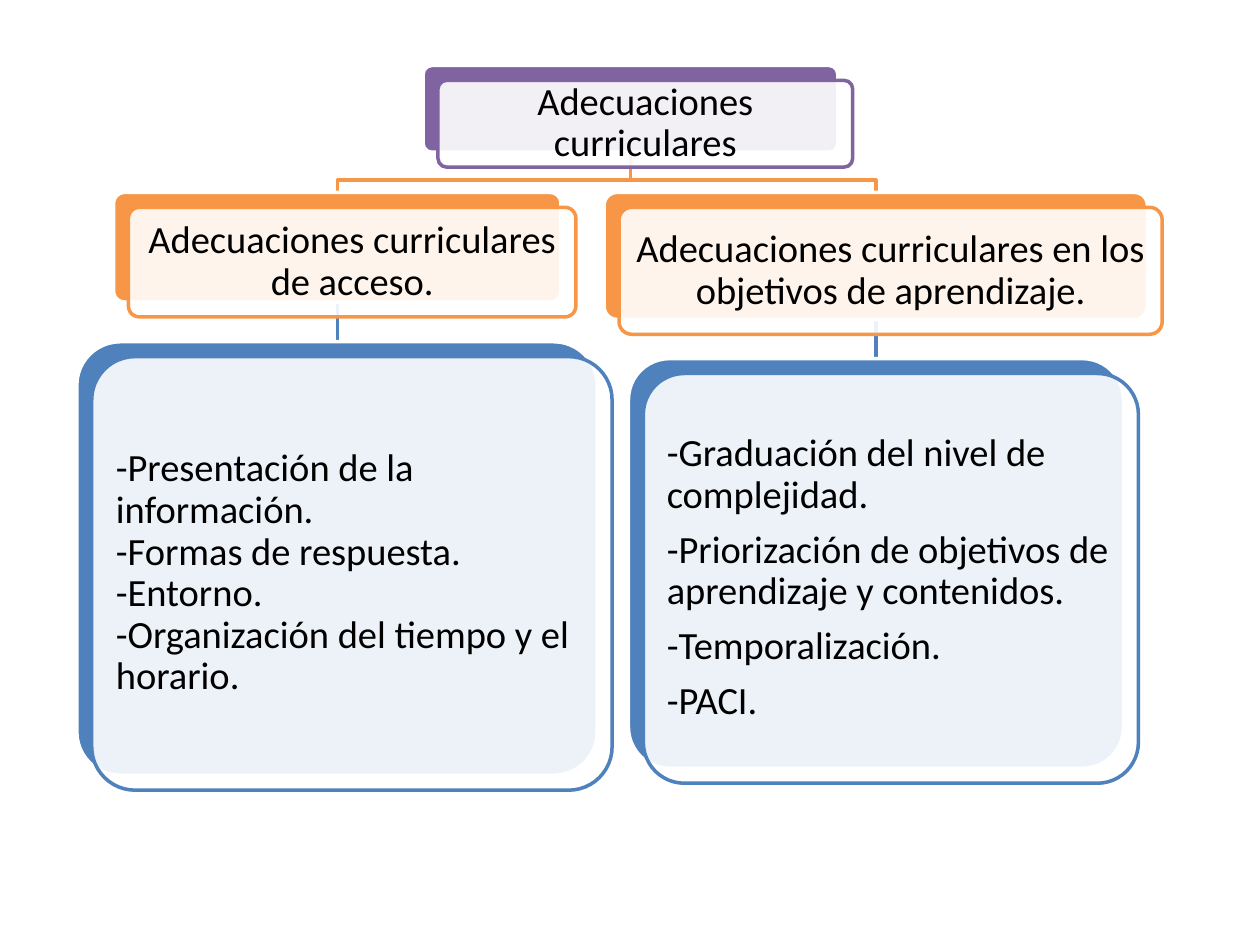
from dataclasses import dataclass
from typing import Optional

import lxml.etree
import pptx
import pptx.dml.color
import pptx.enum.shapes
import pptx.enum.text
import pptx.oxml.ns
import pptx.util

Cm = pptx.util.Cm
Pt = pptx.util.Pt
RGBColor = pptx.dml.color.RGBColor
Align = pptx.enum.text.PP_ALIGN
qn = pptx.oxml.ns.qn

PURPLE = RGBColor(0x80, 0x64, 0xA2)
ORANGE = RGBColor(0xF7, 0x96, 0x46)
BLUE = RGBColor(0x4F, 0x81, 0xBD)
WHITE = RGBColor(0xFF, 0xFF, 0xFF)
BLACK = RGBColor(0x00, 0x00, 0x00)

CORNER = 0.1  # corner radius as a share of the shorter side
FRONT_SHIFT = Cm(0.3)
BRANCH_DROP = Cm(0.25)  # from the horizontal branch to the child card
LINE_WIDTH = Pt(2)


@dataclass(frozen=True)
class Card:
    """A coloured back plate with a translucent front plate and its text."""
    text: str
    color: RGBColor
    left: float
    top: float
    width: float
    height: float
    align: Align = Align.CENTER
    placeholder: Optional[int] = None

    @property
    def center(self) -> int:
        return Cm(self.left + self.width / 2)

    @property
    def bottom(self) -> int:
        return Cm(self.top + self.height)


# Cards of the hierarchy, in centimetres
ROOT = Card("Adecuaciones curriculares", PURPLE, 8.53, 1.32, 8.36, 1.75, placeholder=0)
ACCESS = Card("Adecuaciones curriculares de acceso.", ORANGE, 2.29, 3.88, 9.02, 2.21)
ACCESS_LIST = Card(
    "-Presentación de la información.\v-Formas de respuesta.\v-Entorno.\v"
    "-Organización del tiempo y el horario.",
    BLUE, 1.55, 6.89, 10.49, 8.74, Align.LEFT, 1)
GOALS = Card("Adecuaciones curriculares en los objetivos de aprendizaje.",
             ORANGE, 12.18, 3.88, 10.95, 2.56)
GOALS_LIST = Card(
    "-Graduación del nivel de complejidad.\n"
    "-Priorización de objetivos de aprendizaje y contenidos.\n"
    "-Temporalización.\n-PACI.",
    BLUE, 12.67, 7.23, 9.98, 8.26, Align.LEFT, 2)
BRANCHES = ((ACCESS, ACCESS_LIST), (GOALS, GOALS_LIST))


def write_text(box, text: str, *, align: Align, size: float = 22,
               font: str = "Calibri", color: RGBColor = BLACK) -> None:
    frame = box.text_frame
    frame.word_wrap = True
    frame.auto_size = pptx.enum.text.MSO_AUTO_SIZE.NONE
    frame.vertical_anchor = pptx.enum.text.MSO_ANCHOR.MIDDLE
    frame.margin_left = frame.margin_right = Cm(0.23)
    frame.margin_top = frame.margin_bottom = Cm(0.23)
    frame.text = text
    for para in frame.paragraphs:
        # Plain text: no bullet and no hanging indent
        properties = para._p.get_or_add_pPr()
        properties.set("marL", "0")
        properties.set("indent", "0")
        lxml.etree.SubElement(properties, qn("a:buNone"))
        para.alignment = align
        para.line_spacing = 0.9
        para.space_before = Pt(0)
        para.space_after = Pt(0.35 * size)
        for span in para.runs:
            span.font.size = Pt(size)
            span.font.name = font
            span.font.color.rgb = color
        # Line breaks keep the height of the text around them
        for line_break in para._p.findall(qn("a:br")):
            lxml.etree.SubElement(line_break, qn("a:rPr"), sz=str(int(size * 100)))


def draw_plate(page, left: int, top: int, width: int, height: int, *,
               fill: RGBColor, line: RGBColor, opacity: int = 100) -> None:
    plate = page.shapes.add_shape(
        pptx.enum.shapes.MSO_SHAPE.ROUNDED_RECTANGLE, left, top, width, height)
    plate.shadow.inherit = False
    plate.adjustments[0] = CORNER
    plate.fill.solid()
    plate.fill.fore_color.rgb = fill
    plate.line.color.rgb = line
    plate.line.width = LINE_WIDTH
    if opacity < 100:
        tint = plate._element.spPr.find(qn("a:solidFill"))[0]
        lxml.etree.SubElement(tint, qn("a:alpha"), val=str(opacity * 1000))


def draw_card(page, card: Card) -> None:
    left, top, width, height = map(Cm, (card.left, card.top, card.width, card.height))
    draw_plate(page, left, top, width, height, fill=card.color, line=WHITE)
    left, top = left + FRONT_SHIFT, top + FRONT_SHIFT
    draw_plate(page, left, top, width, height, fill=WHITE, line=card.color, opacity=90)

    # The text area fits inside the rounded corners
    inset = int(min(width, height) * CORNER * (1 - 0.5 ** 0.5))
    area = (left + inset, top + inset, width - 2 * inset, height - 2 * inset)
    if card.placeholder is None:
        box = page.shapes.add_textbox(*area)
    else:
        box = page.placeholders[card.placeholder]
        box.left, box.top, box.width, box.height = area
        page.shapes._spTree.append(box._element)  # bring in front of its plates
    write_text(box, card.text, align=card.align)


def draw_stem(page, parent: Card, child: Card) -> None:
    stem = page.shapes.add_connector(
        pptx.enum.shapes.MSO_CONNECTOR.STRAIGHT,
        parent.center, parent.bottom, parent.center, Cm(child.top))
    stem.line.color.rgb = child.color
    stem.line.width = LINE_WIDTH
    lxml.etree.SubElement(stem._element.spPr, qn("a:effectLst"))


def draw_branch(page, parent: Card, child: Card) -> None:
    end = Cm(child.top)
    turn = end - BRANCH_DROP
    builder = page.shapes.build_freeform(parent.center, parent.bottom)
    builder.add_line_segments(
        [(parent.center, turn), (child.center, turn), (child.center, end)], close=False)
    branch = builder.convert_to_shape()
    branch.shadow.inherit = False
    branch.fill.background()
    branch.line.color.rgb = child.color
    branch.line.width = LINE_WIDTH


def main() -> None:
    deck = pptx.Presentation()
    deck.slide_width, deck.slide_height = Cm(25.4), Cm(19.05)
    page = deck.slides.add_slide(deck.slide_layouts.get_by_name("Two Content"))

    # Lines lie behind the cards
    for heading, details in BRANCHES:
        draw_stem(page, heading, details)
        draw_branch(page, ROOT, heading)

    # Cards
    draw_card(page, ROOT)
    for heading, details in BRANCHES:
        draw_card(page, heading)
        draw_card(page, details)

    deck.save("out.pptx")


if __name__ == "__main__":
    main()
